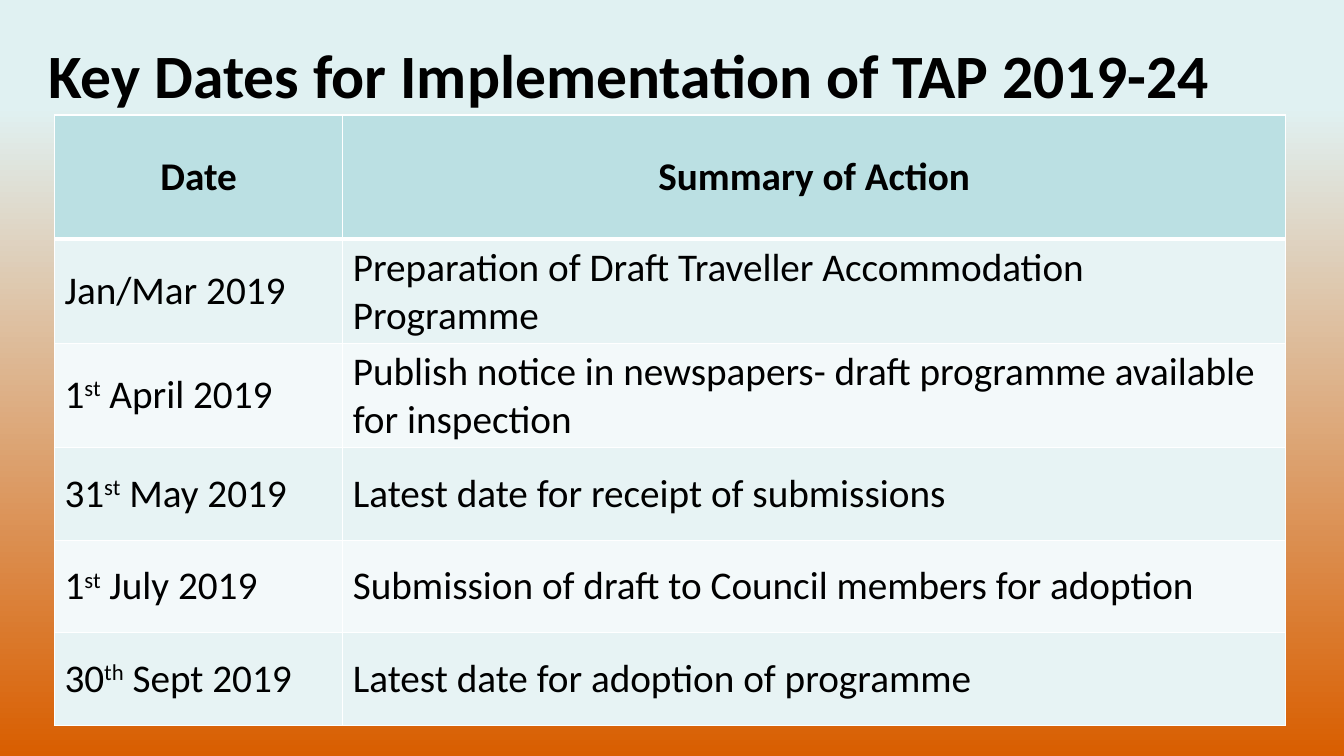
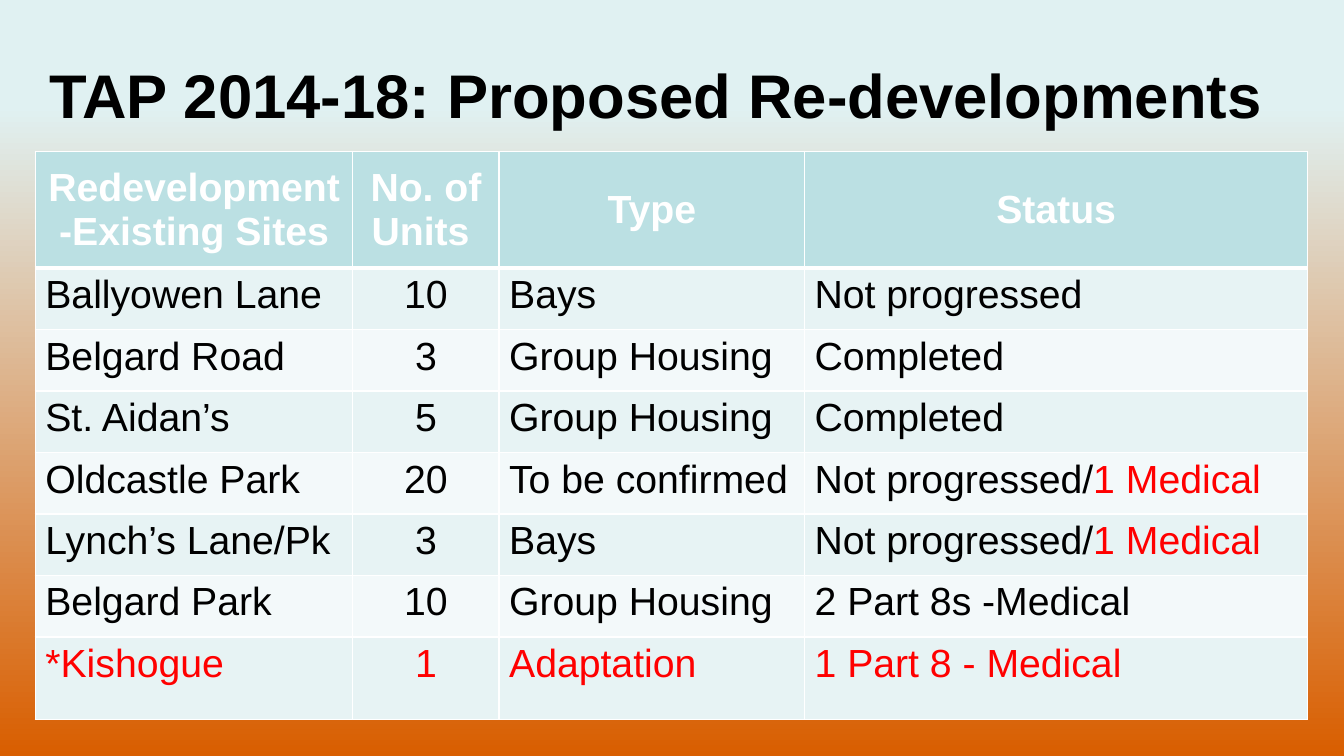
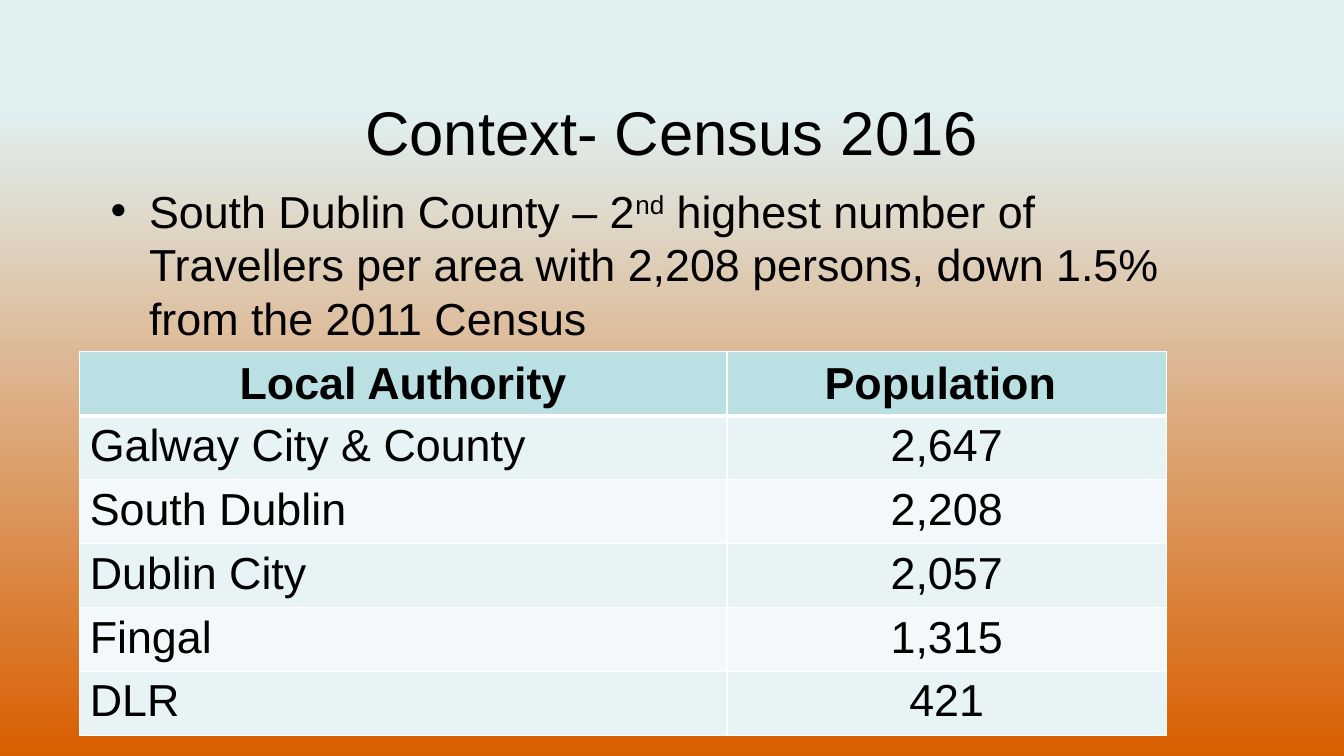
from copy import deepcopy
from dataclasses import dataclass

from lxml import etree
from pptx import Presentation
from pptx import util as u
from pptx.dml.color import RGBColor
from pptx.enum import text
from pptx.oxml import ns

PX = 9144
BLACK = RGBColor(0x00, 0x00, 0x00)
WHITE = RGBColor(0xFF, 0xFF, 0xFF)
RED = RGBColor(0xFF, 0x00, 0x00)
SKY = RGBColor(0xE0, 0xF1, 0xF2)
ORANGE = RGBColor(0xD9, 0x5E, 0x00)
HEADER = RGBColor(0xBB, 0xE0, 0xE3)
BANDS = (RGBColor(0xE7, 0xF3, 0xF4), RGBColor(0xF3, 0xF9, 0xFA))
LEFT, CENTER = text.PP_ALIGN.LEFT, text.PP_ALIGN.CENTER
TOP, MIDDLE = text.MSO_ANCHOR.TOP, text.MSO_ANCHOR.MIDDLE


@dataclass(frozen=True)
class Box:
    x: int
    y: int
    w: int
    h: int


@dataclass(frozen=True)
class Style:
    size: int
    font: str = "Arial"
    color: RGBColor = BLACK
    bold: bool = False
    align: text.PP_ALIGN = LEFT


@dataclass(frozen=True)
class Run:
    text: str
    raised: bool = False
    color: RGBColor | None = None


Runs = str | Run | tuple[str | Run, ...]


@dataclass(frozen=True)
class Table:
    x: int
    y: int
    cols: tuple[int, ...]
    row_heights: tuple[int, ...]
    aligns: tuple[text.PP_ALIGN, ...]
    size: int
    header: tuple[str, ...]
    rows: tuple[tuple[Runs, ...], ...]
    font: str = "Arial"
    header_color: RGBColor = BLACK
    body_anchor: text.MSO_ANCHOR = TOP


def px(n: int) -> u.Emu:
    return u.Emu(n * PX)


def dated(day: str, suffix: str, rest: str) -> Runs:
    return day, Run(suffix, raised=True), rest


def red(label: str) -> Run:
    return Run(label, color=RED)


def add_runs(p, runs: Runs, style: Style) -> None:
    p.alignment = style.align
    for item in runs if isinstance(runs, tuple) else (runs,):
        run = Run(item) if isinstance(item, str) else item
        r = p.add_run()
        r.text = run.text
        r.font.size = u.Pt(style.size)
        r.font.name = style.font
        r.font.bold = style.bold
        r.font.color.rgb = run.color or style.color
        if run.raised:
            r.font._element.set("baseline", "30000")


def add_text(s, box: Box, runs: Runs, style: Style, anchor=TOP):
    sp = s.shapes.add_textbox(px(box.x), px(box.y), px(box.w), px(box.h))
    tf = sp.text_frame
    tf.word_wrap = True
    tf.vertical_anchor = anchor
    p = tf.paragraphs[0]
    add_runs(p, runs, style)
    return p


def add_title(s, box: Box, label: str, font="Arial", bold=True, align=CENTER) -> None:
    add_text(s, box, label, Style(44, font, bold=bold, align=align), MIDDLE)


def add_bullet(s, box: Box, runs: Runs, style: Style) -> None:
    p = add_text(s, box, runs, style)
    p.space_before = u.Pt(6)
    pPr = p._p.get_or_add_pPr()
    pPr.set("marL", str(px(38)))
    pPr.set("indent", str(-px(38)))
    etree.SubElement(pPr, ns.qn("a:buFont"), typeface="Arial")
    etree.SubElement(pPr, ns.qn("a:buChar"), char="•")


def set_borders(cell, top: int, bottom: int) -> None:
    tcPr = cell._tc.get_or_add_tcPr()
    for side, width in (("L", 1), ("R", 1), ("T", top), ("B", bottom)):
        ln = etree.SubElement(tcPr, ns.qn(f"a:ln{side}"), w=str(u.Pt(width)))
        fill = etree.SubElement(ln, ns.qn("a:solidFill"))
        etree.SubElement(fill, ns.qn("a:srgbClr"), val=str(WHITE))


def add_table(s, t: Table) -> None:
    grid = s.shapes.add_table(
        len(t.row_heights), len(t.cols),
        px(t.x), px(t.y), px(sum(t.cols)), px(sum(t.row_heights)),
    ).table
    grid.first_row = False
    grid.horz_banding = False
    for col, w in zip(grid.columns, t.cols):
        col.width = px(w)
    for row, h in zip(grid.rows, t.row_heights):
        row.height = px(h)
    head = Style(t.size, t.font, t.header_color, True, CENTER)
    for i, row in enumerate((t.header, *t.rows)):
        for j, runs in enumerate(row):
            cell = grid.cell(i, j)
            set_borders(cell, 3 if i == 1 else 1, 3 if i == 0 else 1)
            cell.fill.solid()
            cell.fill.fore_color.rgb = BANDS[(i - 1) % 2] if i else HEADER
            cell.vertical_anchor = t.body_anchor if i else MIDDLE
            style = Style(t.size, t.font, align=t.aligns[j]) if i else head
            add_runs(cell.text_frame.paragraphs[0], runs, style)


def set_background(master) -> None:
    fill = master.background.fill
    fill.gradient()
    fill.gradient_angle = 270
    for stop, color, position in zip(fill.gradient_stops, (SKY, ORANGE), (0, 1)):
        stop.color.rgb = color
        stop.position = position
    first = master.element.find(".//" + ns.qn("a:gs"))
    held = deepcopy(first)
    held.set("pos", "14000")
    first.addnext(held)


DATES = Table(
    54, 114, (286, 935), (123,) + (92,) * 5, (LEFT, LEFT), 28,
    ("Date", "Summary of Action"),
    (
        ("Jan/Mar 2019", "Preparation of Draft Traveller Accommodation Programme"),
        (dated("1", "st", " April 2019"),
         "Publish notice in newspapers- draft programme available for inspection"),
        (dated("31", "st", " May 2019"), "Latest date for receipt of submissions"),
        (dated("1", "st", " July 2019"),
         "Submission of draft to Council members for adoption"),
        (dated("30", "th", " Sept 2019"), "Latest date for adoption of programme"),
    ),
    font="Calibri", body_anchor=MIDDLE,
)

SITES = Table(
    35, 150, (315, 145, 303, 499), (116,) + (61,) * 6 + (82,),
    (LEFT, CENTER, LEFT, LEFT), 28,
    ("Redevelopment-Existing Sites", "No. of Units ", "Type", "Status"),
    (
        ("Ballyowen Lane", "10", "Bays", "Not progressed"),
        ("Belgard Road", "3", "Group Housing", "Completed"),
        ("St. Aidan’s", "5", "Group Housing", "Completed"),
        ("Oldcastle Park", "20", "To be confirmed",
         ("Not progressed/", red("1 Medical"))),
        ("Lynch’s Lane/Pk", "3", "Bays", ("Not progressed/", red("1 Medical"))),
        ("Belgard Park", "10", "Group Housing", "2 Part 8s -Medical"),
        tuple(map(red, ("*Kishogue", "1", "Adaptation", "1 Part 8 - Medical"))),
    ),
    header_color=WHITE,
)

POPULATION = Table(
    79, 349, (642, 436), (60,) * 6, (LEFT, CENTER), 32,
    ("Local Authority", "Population "),
    (
        ("Galway City & County", "2,647"),
        ("South Dublin", "2,208"),
        ("Dublin City", "2,057"),
        ("Fingal", "1,315"),
        ("DLR", "421"),
    ),
)


def main() -> None:
    prs = Presentation()
    prs.slide_width, prs.slide_height = u.Inches(13.33), u.Inches(7.5)
    set_background(prs.slide_master)
    dates, sites, census = (
        prs.slides.add_slide(prs.slide_layouts[6]) for _ in range(3)
    )

    add_title(dates, Box(38, 11, 1295, 125),
              "Key Dates for Implementation of TAP 2019-24", "Calibri", align=LEFT)
    add_table(dates, DATES)

    add_title(sites, Box(25, 31, 1252, 125), "TAP 2014-18: Proposed Re-developments")
    add_table(sites, SITES)

    add_title(census, Box(100, 67, 1133, 125), "Context- Census 2016", bold=False)
    add_bullet(
        census, Box(100, 177, 1133, 450),
        dated("South Dublin County – 2", "nd",
              " highest number of Travellers per area with 2,208 persons, "
              "down 1.5% from the 2011 Census"),
        Style(32),
    )
    add_table(census, POPULATION)
    prs.save("out.pptx")


if __name__ == "__main__":
    main()
